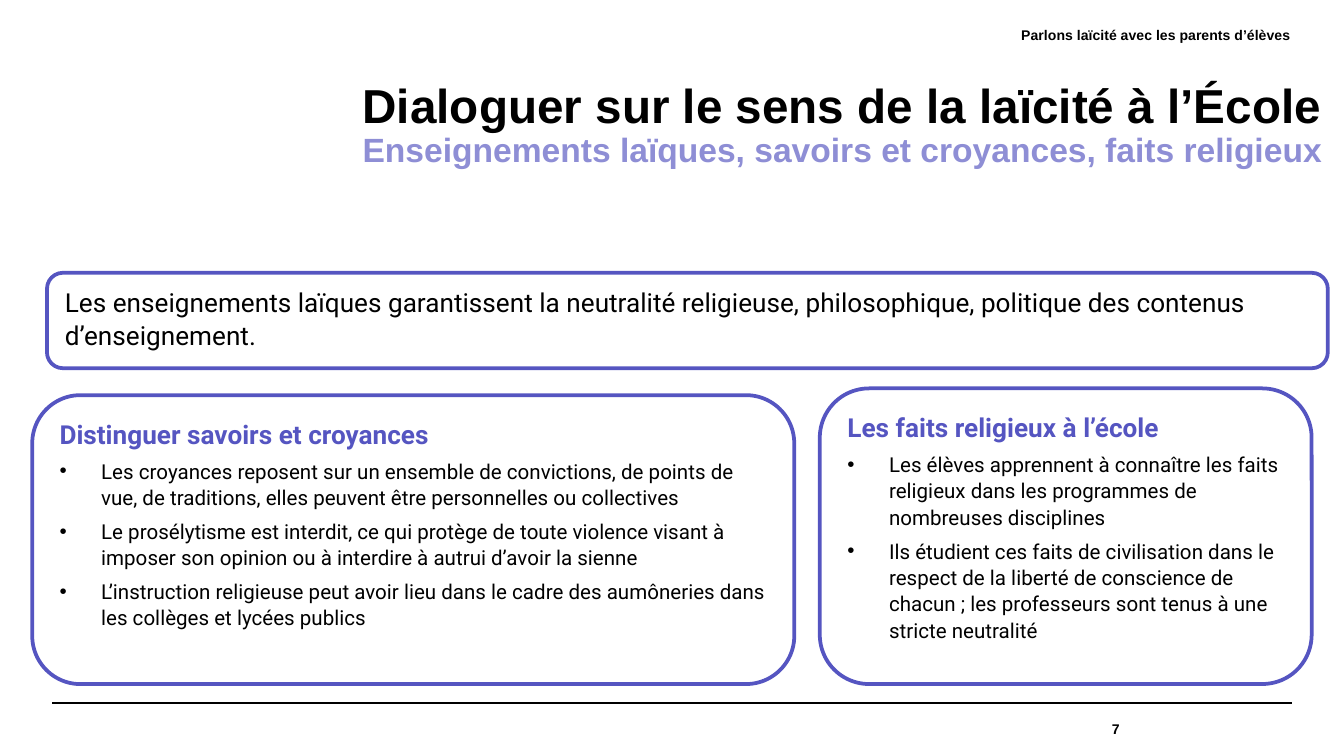
from dataclasses import dataclass

from lxml import etree
from pptx import Presentation
from pptx import util as u
from pptx.dml.color import RGBColor
from pptx.enum import shapes, text
from pptx.oxml.ns import qn

SLIDE_WIDTH = 10
SLIDE_HEIGHT = SLIDE_WIDTH * 9 / 16


@dataclass(frozen=True)
class Theme:
    ink: RGBColor = RGBColor.from_string("000000")
    paper: RGBColor = RGBColor.from_string("FFFFFF")
    accent: RGBColor = RGBColor.from_string("5555C1")
    soft_accent: RGBColor = RGBColor.from_string("8E8ED5")
    head_font: str = "Arial"
    body_font: str = "Roboto"
    small: float = 7.5
    title: float = 25.5
    subtitle: float = 18
    lead: float = 14
    item: float = 11
    border: float = 2
    rule: float = 0.8


THEME = Theme()


def inches(box):
    return [u.Inches(value) for value in box]


def style_run(run, font, size, color, bold=False):
    run.font.name = font
    run.font.size = u.Pt(size)
    run.font.color.rgb = color
    run.font.bold = bold


def clear_margins(frame):
    frame.margin_left = frame.margin_right = 0
    frame.margin_top = frame.margin_bottom = 0
    frame.word_wrap = True


def add_bullet(paragraph):
    properties = paragraph._p.get_or_add_pPr()
    properties.set("marL", str(u.Inches(0.31)))
    properties.set("indent", str(-u.Inches(0.31)))
    etree.SubElement(properties, qn("a:buFont"), typeface="Arial")
    etree.SubElement(properties, qn("a:buChar"), char="•")


def add_small_label(slide, box, wording, anchor):
    label = slide.shapes.add_textbox(*inches(box)).text_frame
    clear_margins(label)
    label.vertical_anchor = anchor
    label.text = wording
    line = label.paragraphs[0]
    line.alignment = text.PP_ALIGN.RIGHT
    style_run(line.runs[0], THEME.head_font, THEME.small, THEME.ink, True)


def add_title(slide, box, heading, subheading):
    title = slide.shapes.title
    title.left, title.top, title.width, title.height = inches(box)
    frame = title.text_frame
    clear_margins(frame)
    frame.auto_size = text.MSO_AUTO_SIZE.NONE
    frame.vertical_anchor = text.MSO_ANCHOR.TOP
    frame.text = f"{heading}\v{subheading}"
    paragraph = frame.paragraphs[0]
    paragraph.alignment = text.PP_ALIGN.RIGHT
    paragraph.line_spacing = 0.9
    heading_run, subheading_run = paragraph.runs
    style_run(heading_run, THEME.head_font, THEME.title, THEME.ink, True)
    style_run(subheading_run, THEME.head_font, THEME.subtitle,
              THEME.soft_accent, True)


def add_panel(slide, box):
    """Outlined rounded panel; returns its text frame."""
    panel = slide.shapes.add_shape(
        shapes.MSO_SHAPE.ROUNDED_RECTANGLE, *inches(box))
    panel.shadow.inherit = False
    panel.fill.solid()
    panel.fill.fore_color.rgb = THEME.paper
    panel.line.color.rgb = THEME.accent
    panel.line.width = u.Pt(THEME.border)
    panel.text_frame.word_wrap = True
    panel.text_frame.vertical_anchor = text.MSO_ANCHOR.TOP
    return panel.text_frame


def format_body(paragraph, size, color, bold=False):
    paragraph.alignment = text.PP_ALIGN.LEFT
    paragraph.line_spacing = 1.07
    paragraph.space_after = u.Pt(4)
    style_run(paragraph.runs[0], THEME.body_font, size, color, bold)


def add_statement(slide, box, statement):
    frame = add_panel(slide, box)
    frame.text = statement
    format_body(frame.paragraphs[0], THEME.lead, THEME.ink)


def add_card(slide, box, heading, points):
    frame = add_panel(slide, box)
    frame.text = "\n".join([heading, *points])
    heading_line, *point_lines = frame.paragraphs
    format_body(heading_line, THEME.lead, THEME.accent, True)
    for point in point_lines:
        add_bullet(point)
        format_body(point, THEME.item, THEME.ink)


def add_footer(slide, box, number):
    left, top, width, height = box
    rule = slide.shapes.add_connector(
        shapes.MSO_CONNECTOR.STRAIGHT, *inches((left, top, left + width, top)))
    rule.line.color.rgb = THEME.ink
    rule.line.width = u.Pt(THEME.rule)
    etree.SubElement(rule._element.spPr, qn("a:effectLst"))
    add_small_label(slide, (left + 6.46, top, 1.48, height), number,
                    text.MSO_ANCHOR.MIDDLE)


def main():
    deck = Presentation()
    deck.slide_width, deck.slide_height = inches((SLIDE_WIDTH, SLIDE_HEIGHT))
    slide = deck.slides.add_slide(deck.slide_layouts.get_by_name("Title Only"))

    # Footer rule, page number and running header
    add_footer(slide, (0.39, 5.23, 9.22, 0.39), "7")
    add_small_label(slide, (3.62, 0.2, 5.98, 0.39),
                    "Parlons laïcité avec les parents d’élèves",
                    text.MSO_ANCHOR.TOP)

    # Title
    add_title(slide, (0.67, 0.61, 9.17, 1.18),
              "Dialoguer sur le sens de la laïcité à l’École",
              "Enseignements laïques, savoirs et croyances, faits religieux")

    # Main statement
    add_statement(
        slide, (0.35, 2.03, 9.53, 0.71),
        "Les enseignements laïques garantissent la neutralité religieuse, "
        "philosophique, politique des contenus d’enseignement.")

    # Two cards
    add_card(slide, (0.24, 2.94, 5.67, 2.15), "Distinguer savoirs et croyances", [
        "Les croyances reposent sur un ensemble de convictions, de points de "
        "vue, de traditions, elles peuvent être personnelles ou collectives",
        "Le prosélytisme est interdit, ce qui protège de toute violence visant "
        "à imposer son opinion ou à interdire à autrui d’avoir la sienne",
        "L’instruction religieuse peut avoir lieu dans le cadre des aumôneries "
        "dans les collèges et lycées publics",
    ])
    add_card(slide, (6.1, 2.89, 3.66, 2.2), "Les faits religieux à l’école", [
        "Les élèves apprennent à connaître les faits religieux dans les "
        "programmes de nombreuses disciplines",
        "Ils étudient ces faits de civilisation dans le respect de la liberté "
        "de conscience de chacun ; les professeurs sont tenus à une stricte "
        "neutralité",
    ])

    deck.save("out.pptx")


if __name__ == "__main__":
    main()
